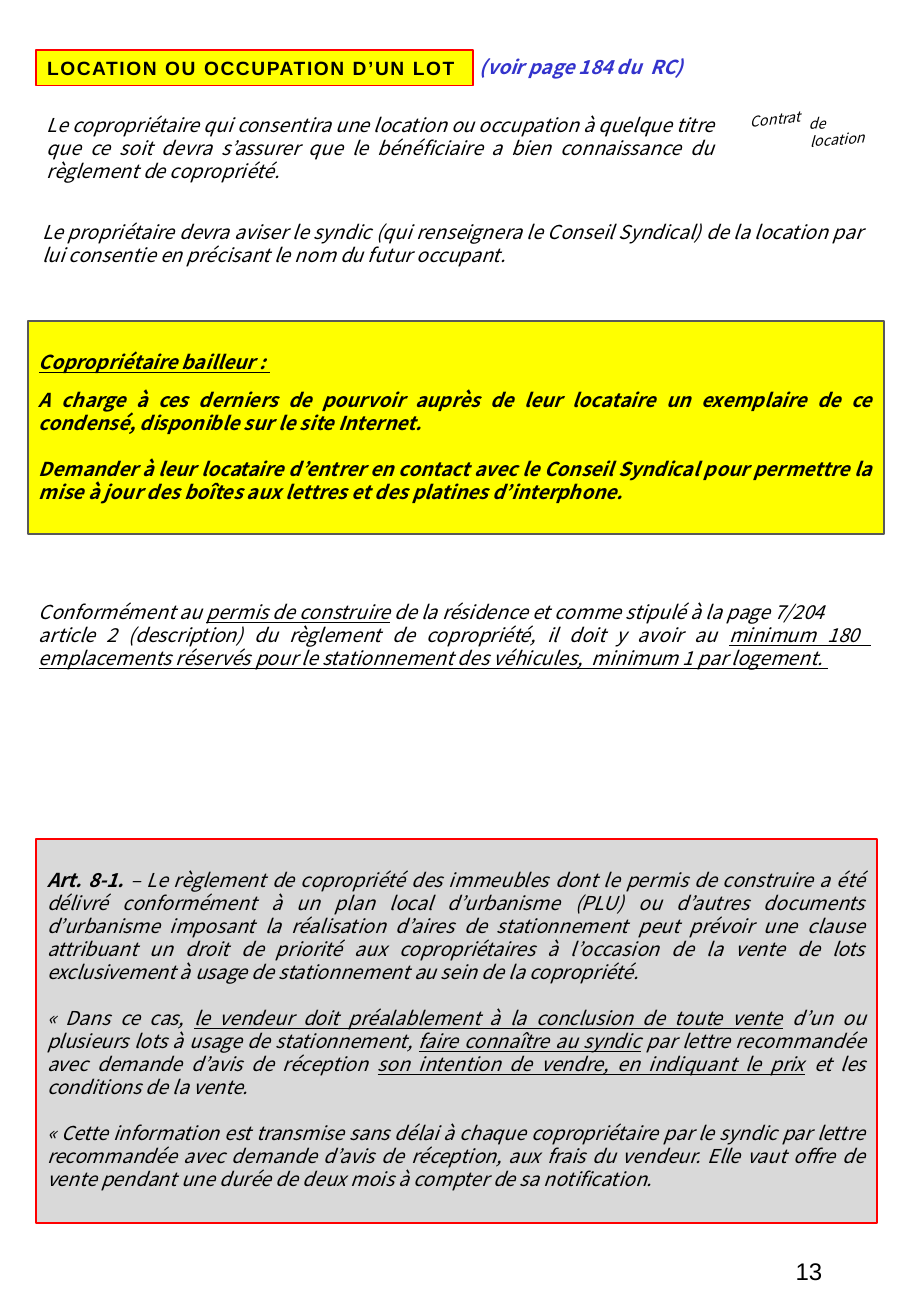
"""Build the page on letting a lot, with its notices and the quoted article 8-1."""
from dataclasses import dataclass

from pptx import Presentation
from pptx.dml.color import RGBColor
from pptx.enum.shapes import MSO_SHAPE
from pptx.enum.text import MSO_ANCHOR, PP_ALIGN
from pptx.util import Pt

PX = 7937.5


@dataclass(frozen=True)
class Theme:
    black: str = "000000"
    blue: str = "3333CC"
    red: str = "FF0000"
    yellow: str = "FFFF00"
    silver: str = "D9D9D9"
    charcoal: str = "595959"
    body_font: str = "Noto Sans CJK KR"
    heading_font: str = "Arial"
    body_size: int = 12
    note_size: int = 9
    number_size: int = 15
    leading: float = 1.2


theme = Theme()
presentation = Presentation()
presentation.slide_width = int(908 * PX)
presentation.slide_height = int(1316 * PX)
slide = presentation.slides.add_slide(presentation.slide_layouts[6])


def add_block(box, paragraphs, fill=None, line=None, line_width=0.75, top_inset=6,
              size=theme.body_size, font=theme.body_font, color=theme.black,
              bold=False, italic=True, align=PP_ALIGN.JUSTIFY, rotation=0):
    """Add a box of paragraphs, each a gap in points and a list of (text, underlined)."""
    left, top, width, height = (int(value * PX) for value in box)
    if fill:
        shape = slide.shapes.add_shape(MSO_SHAPE.RECTANGLE, left, top, width, height)
        shape.shadow.inherit = False
        shape.fill.solid()
        shape.fill.fore_color.rgb = RGBColor.from_string(fill)
        shape.line.color.rgb = RGBColor.from_string(line)
        shape.line.width = Pt(line_width)
    else:
        shape = slide.shapes.add_textbox(left, top, width, height)
    shape.rotation = rotation
    frame = shape.text_frame
    frame.word_wrap = True
    frame.vertical_anchor = MSO_ANCHOR.TOP
    frame.margin_left = frame.margin_right = int(11 * PX)
    frame.margin_top, frame.margin_bottom = int(top_inset * PX), int(6 * PX)
    for index, (gap, runs) in enumerate(paragraphs):
        paragraph = frame.paragraphs[0] if index == 0 else frame.add_paragraph()
        paragraph.alignment = align
        paragraph.space_before = Pt(gap)
        if font == theme.body_font:
            paragraph.line_spacing = Pt(size * theme.leading)
        paragraph.font.name = font
        paragraph.font.size = Pt(size)
        paragraph.font.bold = bold
        paragraph.font.italic = italic
        paragraph.font.color.rgb = RGBColor.from_string(color)
        for text, underlined in runs:
            run = paragraph.add_run()
            run.text = text
            if underlined:
                run.font.underline = True
    return shape


heading = add_block(
    (36, 50, 437, 36), [(0, [("LOCATION OU OCCUPATION D’UN LOT", False)])],
    fill=theme.yellow, line=theme.red, font=theme.heading_font,
    bold=True, italic=False, align=PP_ALIGN.LEFT)
heading.text_frame.paragraphs[0].runs[0].font._element.set("spc", "100")

add_block((469, 49, 377, 35), [(0, [("(voir page 184 du  RC)", False)])],
          color=theme.blue, bold=True, align=PP_ALIGN.LEFT)

add_block((36, 107, 690, 82), [(0, [(
    "Le copropriétaire qui consentira une location ou occupation à quelque titre que ce soit "
    "devra s’assurer que le bénéficiaire a bien connaissance du règlement de copropriété.",
    False)])])

for box, label, rotation in [((739, 104, 81, 29), "Contrat", 354.1),
                             ((798, 107, 92, 46), "de location", 355.9)]:
    add_block(box, [(0, [(label, False)])], size=theme.note_size,
              align=PP_ALIGN.LEFT, rotation=rotation)
slide.shapes[-1].text_frame.margin_right = int(18 * PX)

add_block((31, 214, 844, 58), [(0, [(
    "Le propriétaire devra aviser le syndic (qui renseignera le Conseil Syndical) de la "
    "location par lui consentie en précisant le nom du futur occupant.", False)])])

add_block((28, 321, 856, 213), [
    (0, [("Copropriétaire bailleur : ", True)]),
    (9.6, [("A charge à ces derniers de pourvoir auprès de leur locataire un exemplaire de ce "
            "condensé, disponible sur le site Internet.", False)]),
    (14.4, [("Demander à leur locataire d’entrer en contact avec le Conseil Syndical pour "
             "permettre la mise à jour des boîtes aux lettres et des platines d’interphone.",
             False)]),
], fill=theme.yellow, line=theme.charcoal, top_inset=29, bold=True)

add_block((28, 594, 854, 82), [
    (0, [("Conformément au ", False), ("permis de construire", True),
         (" de la résidence et comme stipulé à la page 7/204", False)]),
    (0, [("article 2 (description) du règlement de copropriété, il doit y avoir au ", False),
         ("minimum 180  emplacements réservés pour le stationnement des véhicules,  "
          "minimum 1 par logement. ", True)]),
])

article = add_block((36, 839, 841, 384), [
    (0, [("Art. 8-1.", False),
         (" – Le règlement de copropriété des immeubles dont le permis de construire a été "
          "délivré conformément à un plan local d’urbanisme (PLU) ou d’autres documents "
          "d’urbanisme imposant la réalisation d’aires de stationnement peut prévoir une clause "
          "attribuant un droit de priorité aux copropriétaires à l’occasion de la vente de lots "
          "exclusivement à usage de stationnement au sein de la copropriété.", False)]),
    (14.4, [("« Dans ce cas, ", False),
            ("le vendeur doit préalablement à la conclusion de toute vente", True),
            (" d’un ou plusieurs lots à usage de stationnement, ", False),
            ("faire connaître au syndic", True),
            (" par lettre recommandée avec demande d’avis de réception ", False),
            ("son intention de vendre, en indiquant le prix", True),
            (" et les conditions de la vente.", False)]),
    (14.4, [("« Cette information est transmise sans délai à chaque copropriétaire par le "
             "syndic par lettre recommandée avec demande d’avis de réception, aux frais du "
             "vendeur. Elle vaut offre de vente pendant une durée de deux mois à compter de sa "
             "notification.", False)]),
], fill=theme.silver, line=theme.red, line_width=1, top_inset=29)
article.text_frame.paragraphs[0].runs[0].font.bold = True

add_block((703, 1251, 212, 63), [(0, [("13", False)])], size=theme.number_size,
          font=theme.heading_font, italic=False, align=PP_ALIGN.CENTER)

presentation.save("out.pptx")
